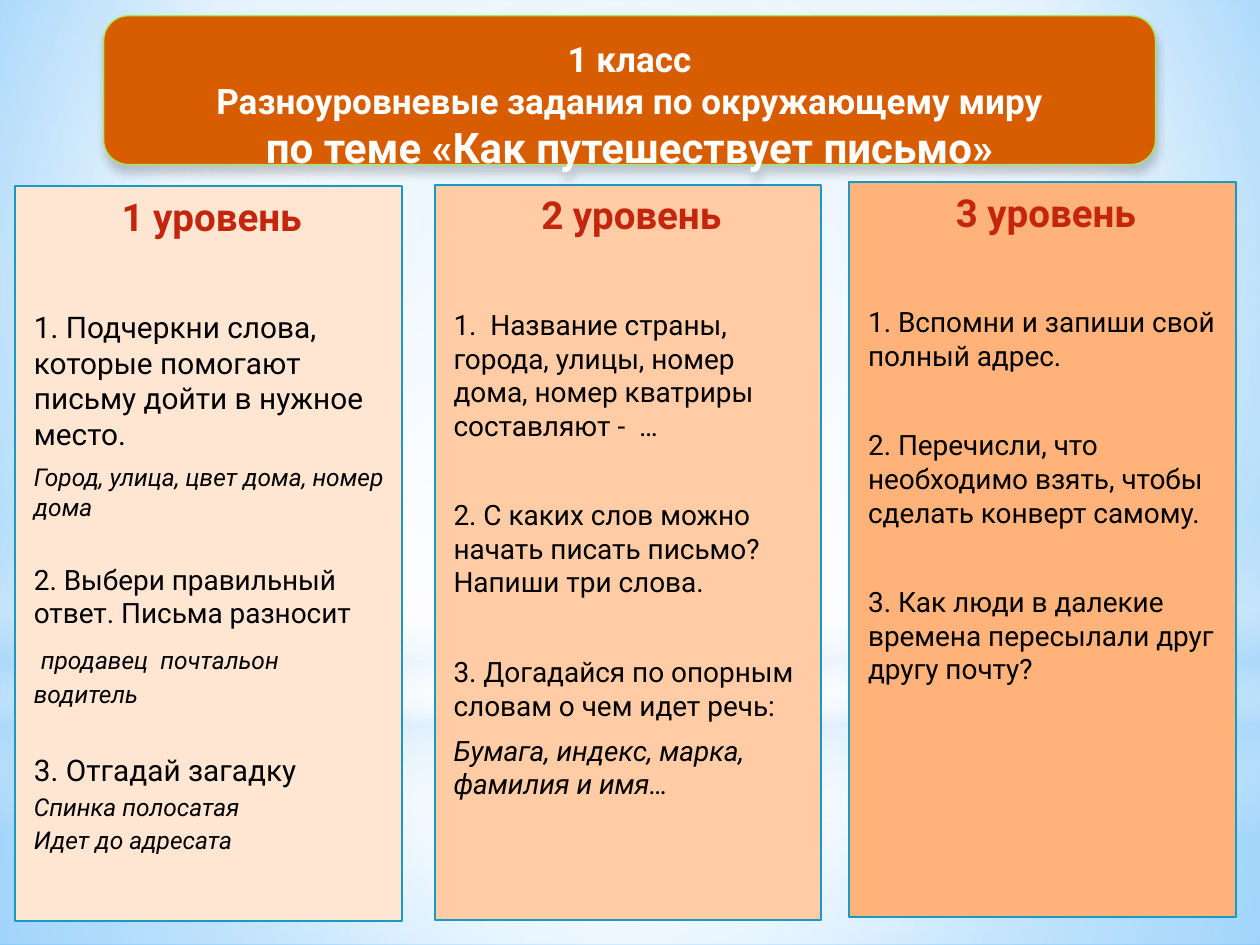
from lxml import etree
from pptx import Presentation
from pptx import util as u
from pptx.dml.color import RGBColor
from pptx.enum import shapes, text
from pptx.oxml.ns import nsdecls, qn

FONT = "Roboto"
COLORS = {
    "title_fill": "D85C00", "title_line": "A7EA52", "title_text": "FFFFFF",
    "panel_line": "1999C6", "heading": "C3260C", "body": "000000",
    "white": "FFFFFF", "haze": "B4DCFA", "sky": "9ED5FF", "deep_sky": "5BB9FF",
}

# Title lines: text, size
TITLE = [
    ("1 класс", 20),
    ("Разноуровневые задания по окружающему миру", 20),
    ("по теме «Как путешествует письмо»", 24),
]

# Paragraph formats
HEADING = dict(size=22, color="heading", bold=True, before=2, after=3,
               align=text.PP_ALIGN.CENTER)
BODY = dict(size=16, before=29, after=3)
FIRST = dict(BODY, before=37)
HINT = dict(BODY, before=3.6, italic=True)
SMALL_HINT = dict(HINT, size=14, before=3)
RIDDLE = dict(SMALL_HINT, line=13)

# Panels: left, top, fill, paragraphs
PANELS = [
    (8.6, 106.5, "FFE6D3", [
        ("1 уровень", HEADING),
        ("1. Подчеркни слова, которые помогают письму дойти в нужное место.",
         dict(FIRST, size=17)),
        ("Город, улица, цвет дома, номер дома", SMALL_HINT),
        ("2. Выбери правильный ответ. Письма разносит", dict(BODY, before=20.5)),
        ("продавец  почтальон водитель",
         dict(SMALL_HINT, before=4, line=19, first_indent=4)),
        ("3. Отгадай загадку", dict(BODY, size=17, before=29.5, line=13)),
        ("Спинка полосатая", RIDDLE),
        ("Идет до адресата", RIDDLE),
    ]),
    (248.4, 105.8, "FFCCA6", [
        ("2 уровень", HEADING),
        ("1.  Название страны, города, улицы, номер дома, номер кватриры "
         "составляют -  …", FIRST),
        ("2. С каких слов можно начать писать письмо? Напиши три слова.", BODY),
        ("3. Догадайся по опорным словам о чем идет речь:", BODY),
        ("Бумага, индекс, марка, фамилия и имя…", HINT),
    ]),
    (485.3, 104.2, "FFB37A", [
        ("3 уровень", HEADING),
        ("1. Вспомни и запиши свой полный адрес.", FIRST),
        ("2. Перечисли, что необходимо взять, чтобы сделать конверт самому.", BODY),
        ("3. Как люди в далекие времена пересылали друг другу почту?", BODY),
    ]),
]
PANEL_SIZE = (221, 420)

# Gradients: stops (position, colour, opacity) and a focus rectangle or None
SKY = ([(0, "sky", 100), (60, "white", 100), (100, "deep_sky", 100)],
       (20, 10, 20, 60))
CENTER = (50, 50, 50, 50)
RECT, OVAL = shapes.MSO_SHAPE.RECTANGLE, shapes.MSO_SHAPE.OVAL
LAYERS = [
    (RECT, (0, 402, 720, 138),
     [(0, "white", 91), (37, "white", 76), (100, "haze", 79)], CENTER),
    (RECT, (0, 0, 720, 402),
     [(0, "white", 89), (48, "white", 62), (100, "haze", 79)], CENTER),
    (RECT, (0, 297, 720, 180),
     [(0, "white", 0), (29, "white", 30), (45, "haze", 40),
      (55, "white", 26), (65, "haze", 60), (100, "white", 0)], None),
    (OVAL, (0, 126, 720, 402),
     [(0, "white", 100), (56, "white", 0)], CENTER),
]


def rgb(name):
    return RGBColor.from_string(COLORS.get(name, name))


def set_gradient(element, stops, focus):
    """Replace the first solid fill in the element by a gradient."""
    stop_xml = "".join(
        f'<a:gs pos="{position * 1000}"><a:srgbClr val="{COLORS[color]}">'
        f'<a:alpha val="{opacity * 1000}"/></a:srgbClr></a:gs>'
        for position, color, opacity in stops)
    shade = '<a:lin ang="5400000" scaled="0"/>'
    if focus:
        sides = " ".join(f'{side}="{value * 1000}"'
                         for side, value in zip("ltrb", focus))
        shade = f'<a:path path="circle"><a:fillToRect {sides}/></a:path>'
    gradient = etree.fromstring(
        f'<a:gradFill {nsdecls("a")} rotWithShape="1">'
        f'<a:gsLst>{stop_xml}</a:gsLst>{shade}</a:gradFill>')
    solid = element.find(".//" + qn("a:solidFill"))
    solid.getparent().replace(solid, gradient)


def add_box(slide, kind, box, fill, line=None, width=1):
    shape = slide.shapes.add_shape(kind, *(u.Pt(value) for value in box))
    shape.shadow.inherit = False
    shape.fill.solid()
    shape.fill.fore_color.rgb = rgb(fill)
    if line:
        shape.line.color.rgb = rgb(line)
        shape.line.width = u.Pt(width)
    else:
        shape.line.fill.background()
    return shape


def set_frame(shape, left, top):
    frame = shape.text_frame
    frame.word_wrap = True
    frame.vertical_anchor = text.MSO_ANCHOR.TOP
    frame.margin_left, frame.margin_top = u.Pt(left), u.Pt(top)
    return frame


def add_text(frame, content, size=16, color="body", bold=False, italic=False,
             align=text.PP_ALIGN.LEFT, before=0, after=0, line=None,
             first_indent=0):
    paragraph = frame.paragraphs[0]
    if paragraph.runs:
        paragraph = frame.add_paragraph()
    paragraph.alignment = align
    paragraph.space_before, paragraph.space_after = u.Pt(before), u.Pt(after)
    if line:
        paragraph.line_spacing = u.Pt(line)
    if first_indent:
        paragraph._p.get_or_add_pPr().set("indent", str(u.Pt(first_indent)))
    run = paragraph.add_run()
    run.text = content
    font = run.font
    font.name, font.size, font.bold, font.italic = FONT, u.Pt(size), bold, italic
    font.color.rgb = rgb(color)


def main():
    presentation = Presentation()
    presentation.slide_width, presentation.slide_height = u.Pt(720), u.Pt(540)
    slide = presentation.slides.add_slide(presentation.slide_layouts[6])

    # Background sky and haze
    slide.background.fill.solid()
    slide.background.fill.fore_color.rgb = rgb("sky")
    set_gradient(slide.element, *SKY)
    for kind, box, stops, focus in LAYERS:
        layer = add_box(slide, kind, box, "white")
        set_gradient(layer.element, stops, focus)

    # Level panels
    for left, top, fill, paragraphs in PANELS:
        panel = add_box(slide, RECT, (left, top, *PANEL_SIZE), fill,
                        "panel_line", 1.25)
        frame = set_frame(panel, 10.8, 3.6)
        for content, style in paragraphs:
            add_text(frame, content, **style)

    # Title banner with a soft shadow
    banner = add_box(slide, shapes.MSO_SHAPE.ROUNDED_RECTANGLE,
                     (59.3, 9, 601, 85), "title_fill", "title_line", 0.75)
    effects = banner.element.spPr.find(qn("a:effectLst"))
    effects.append(etree.fromstring(
        f'<a:outerShdw {nsdecls("a")} blurRad="{u.Pt(5)}" dist="{u.Pt(4)}" '
        'dir="5400000" rotWithShape="0"><a:srgbClr val="000000">'
        '<a:alpha val="20000"/></a:srgbClr></a:outerShdw>'))
    frame = set_frame(banner, 7.2, 8.5)
    for content, size in TITLE:
        add_text(frame, content, size=size, color="title_text", bold=True,
                 align=text.PP_ALIGN.CENTER)

    presentation.save("out.pptx")


if __name__ == "__main__":
    main()
